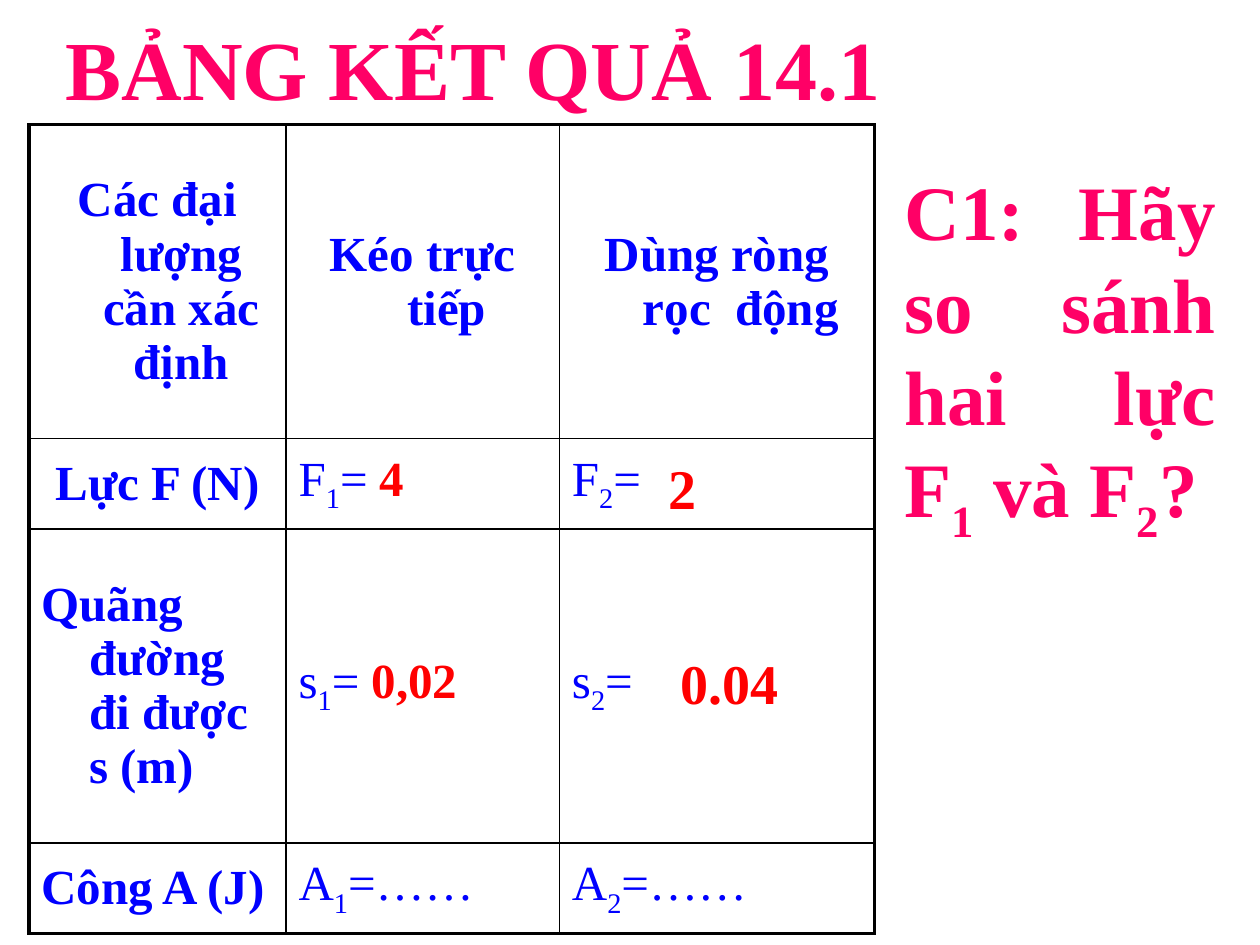
from pptx import Presentation
from pptx import util as u
from pptx.dml.color import RGBColor
from pptx.enum import text
from pptx.oxml.ns import qn
from lxml import etree

FONT = "Times New Roman"
PINK, RED, BLUE, BLACK = "FF0066", "FF0000", "0000FF", "000000"
LEFT, CENTER, JUSTIFY = (text.PP_ALIGN.LEFT, text.PP_ALIGN.CENTER,
                         text.PP_ALIGN.JUSTIFY)


def color(value):
    return RGBColor.from_string(value)


def add_run(p, words, size, fill, bold=True, sub=False):
    r = p.add_run()
    r.text = words
    r.font.name = FONT
    r.font.size = u.Pt(size)
    r.font.bold = bold
    r.font.color.rgb = color(fill)
    if sub:
        r.font._element.set("baseline", "-25000")


def set_indent(p, left, first):
    pPr = p._p.get_or_add_pPr()
    pPr.set("marL", str(u.Inches(left)))
    pPr.set("indent", str(u.Inches(first)))
    return pPr


def fill_text(sp, box, runs, size, fill, align=LEFT):
    """Place a text shape; runs are (words, is_subscript) pairs."""
    sp.left, sp.top, sp.width, sp.height = [u.Inches(v) for v in box]
    tf = sp.text_frame
    tf.word_wrap = True
    tf.auto_size = text.MSO_AUTO_SIZE.NONE
    tf.vertical_anchor = text.MSO_ANCHOR.TOP
    p = tf.paragraphs[0]
    p.alignment = align
    pPr = set_indent(p, 0, 0)
    before = etree.SubElement(pPr, qn("a:spcBef"))
    etree.SubElement(before, qn("a:spcPct")).set("val", "50000")
    etree.SubElement(pPr, qn("a:buNone"))
    for words, sub in runs:
        add_run(p, words, size, fill, sub=sub)


def set_borders(cell, widths):
    tcPr = cell._tc.get_or_add_tcPr()
    for i, (side, width) in enumerate(zip("LRTB", widths)):
        ln = etree.Element(qn("a:ln" + side), w=str(u.Pt(width)))
        solid = etree.SubElement(ln, qn("a:solidFill"))
        etree.SubElement(solid, qn("a:srgbClr"), val=BLACK)
        tcPr.insert(i, ln)


def start_cell(cell, align):
    cell.fill.background()
    cell.vertical_anchor = text.MSO_ANCHOR.MIDDLE
    p = cell.text_frame.paragraphs[0]
    p.alignment = align
    set_indent(p, 0.38, -0.38)
    return p


def add_label(cell, words, align):
    add_run(start_cell(cell, align), words, 28, BLUE)


def add_quantity(cell, symbol, index, tail, value=""):
    p = start_cell(cell, LEFT)
    add_run(p, symbol, 28, BLUE, bold=False)
    add_run(p, index, 28, BLUE, bold=False, sub=True)
    add_run(p, tail, 28, BLUE, bold=False)
    if value:
        add_run(p, value, 28, RED)


def add_results(s):
    cols, rows = [2.04, 2.17, 2.5], [2.49, 0.72, 2.49, 0.72]
    frame = s.shapes.add_table(len(rows), len(cols), u.Inches(0.23), u.Inches(0.99),
                               u.Inches(sum(cols)), u.Inches(sum(rows)))
    tbl = frame.table
    tbl.first_row = tbl.horz_banding = False
    for col, width in zip(tbl.columns, cols):
        col.width = u.Inches(width)
    for row, height in zip(tbl.rows, rows):
        row.height = u.Inches(height)

    # Header row
    for c, words in enumerate(["Các đại lượng cần xác định", "Kéo trực tiếp",
                               "Dùng ròng rọc  động"]):
        add_label(tbl.cell(0, c), words, CENTER)

    # Measured quantities: label, alignment, symbol, (tail, value) per column
    quantities = [
        ("Lực F (N)", CENTER, "F", [("= ", "4"), ("=", "")]),
        ("Quãng đường đi được s (m)", LEFT, "s", [("= ", "0,02"), ("=", "")]),
        ("Công A (J)", LEFT, "A", [("=……", ""), ("=……", "")]),
    ]
    for r, (label, align, symbol, entries) in enumerate(quantities, 1):
        add_label(tbl.cell(r, 0), label, align)
        for c, (tail, value) in enumerate(entries, 1):
            add_quantity(tbl.cell(r, c), symbol, str(c), tail, value)

    # Thick outline, thin inner lines
    last_r, last_c = len(rows) - 1, len(cols) - 1
    for r in range(len(rows)):
        for c in range(len(cols)):
            outer = (c == 0, c == last_c, r == 0, r == last_r)
            set_borders(tbl.cell(r, c), [2 if edge else 1 for edge in outer])


def main():
    prs = Presentation()
    prs.slide_width, prs.slide_height = u.Inches(10), u.Inches(7.5)
    s = prs.slides.add_slide(prs.slide_layouts[1])

    # Title and question
    fill_text(s.shapes.title, (0.42, 0.08, 8.53, 0.91),
              [("BẢNG KẾT QUẢ 14.1", False)], 48, PINK)
    fill_text(s.placeholders[1], (7.08, 1.25, 2.67, 4.17),
              [("C1: Hãy so sánh hai lực F", False), ("1", True),
               (" và F", False), ("2", True), ("?", False)], 44, PINK, JUSTIFY)

    add_results(s)

    # Answers laid over the table
    for words, box in [("2", (5.21, 3.55, 0.75, 0.64)),
                       ("0.04", (5.3, 5.1, 1.14, 0.64))]:
        sp = s.shapes.add_textbox(0, 0, 0, 0)
        fill_text(sp, box, [(words, False)], 32, RED)

    prs.save("out.pptx")


if __name__ == "__main__":
    main()
